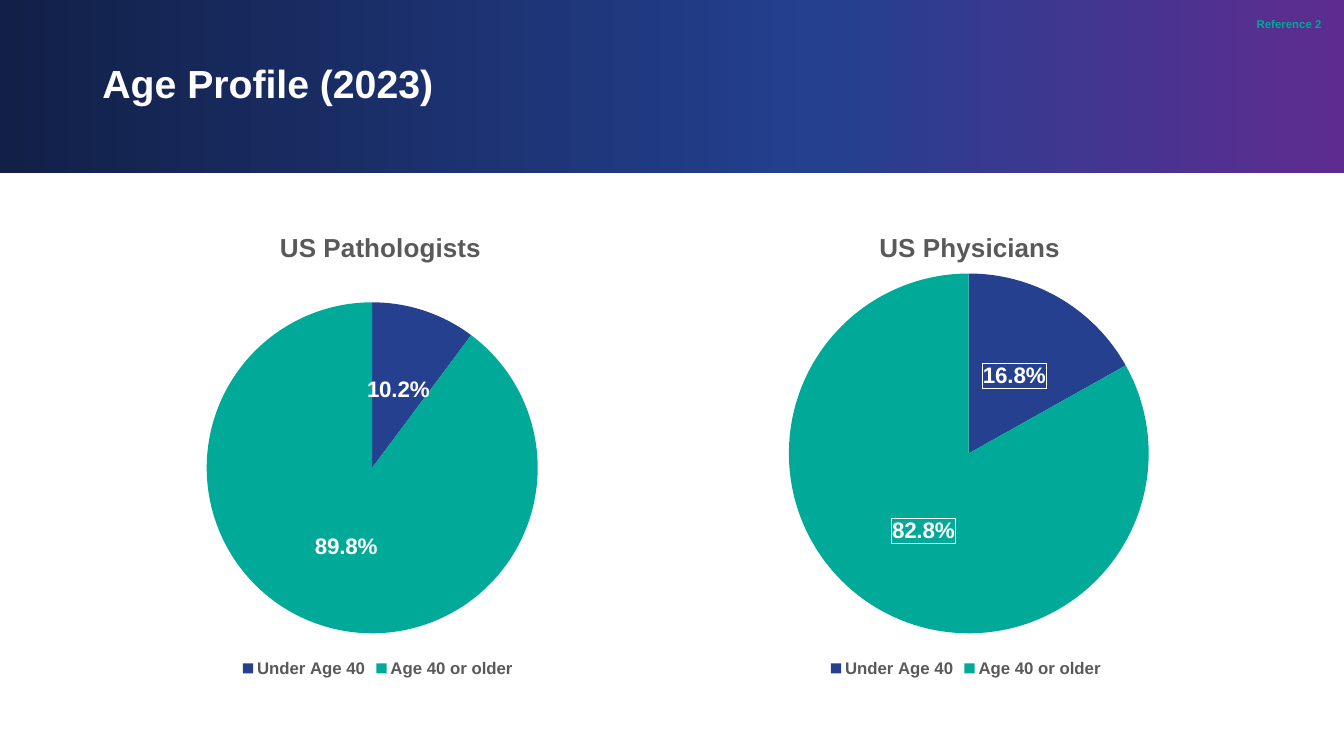
import copy

import pptx
import pptx.chart.data
import pptx.dml.color
import pptx.enum.chart
import pptx.enum.shapes
import pptx.enum.text
import pptx.oxml
import pptx.oxml.ns
import pptx.util

Pt = pptx.util.Pt
qn = pptx.oxml.ns.qn
RGB = pptx.dml.color.RGBColor.from_string
ALIGN = pptx.enum.text.PP_ALIGN
COLORS = {"navy": "122048", "blue": "24408F", "purple": "5E2C91",
          "teal": "00A998", "gray": "595959", "white": "FFFFFF", "black": "000000"}


def set_text(frame, text, size, color, align=ALIGN.LEFT, line_spacing=None):
    para = frame.paragraphs[0]
    para.alignment = align
    para.line_spacing = line_spacing
    span = para.add_run()
    span.text = text
    span.font.name, span.font.size, span.font.bold = "Arial", Pt(size), True
    span.font.color.rgb = RGB(COLORS[color])


def set_layout(parent, index, **fractions):
    """Place a chart part by fractions of the chart's width and height."""
    for old in parent.findall(qn("c:layout")):
        parent.remove(old)
    target = '<c:layoutTarget val="inner"/>' if "w" in fractions else ""
    modes = "".join(f'<c:{key}Mode val="edge"/>' for key in "xy")
    sizes = "".join(f'<c:{key} val="{value}"/>' for key, value in fractions.items())
    parent.insert(index, pptx.oxml.parse_xml(
        f'<c:layout {pptx.oxml.ns.nsdecls("c")}><c:manualLayout>'
        f'{target}{modes}{sizes}</c:manualLayout></c:layout>'))


deck = pptx.Presentation()
deck.slide_width, deck.slide_height = Pt(960), Pt(540)
page = deck.slides.add_slide(deck.slide_layouts[5])

# Gradient banner, behind the title
banner = page.shapes.add_shape(pptx.enum.shapes.MSO_SHAPE.RECTANGLE, 0, 0, Pt(960), Pt(123.8))
banner.shadow.inherit = False
banner.line.fill.background()
banner.fill.gradient()
banner.fill.gradient_angle = 0
first_stop = banner.element.find(".//" + qn("a:gs"))
first_stop.addnext(copy.deepcopy(first_stop))
for stop, color, position in zip(banner.fill.gradient_stops, ("navy", "blue", "purple"), (0, 0.61, 1)):
    stop.color.rgb = RGB(COLORS[color])
    stop.position = position
banner.element.getparent().insert(2, banner.element)

# Title
title = page.shapes.title
title.left, title.top, title.width, title.height = Pt(66), Pt(8), Pt(828), Pt(107)
title.text_frame.vertical_anchor = pptx.enum.text.MSO_ANCHOR.MIDDLE
set_text(title.text_frame, "Age Profile (2023)", 28, "white", line_spacing=0.9)

# Pie charts: heading, left, values, plot area, label border
pies = [
    ("US Pathologists", 66, (0.102, 0.898), dict(x=0.2, y=0.21, w=0.58, h=0.69), 0.32, False),
    ("US Physicians", 486, (0.168, 0.828), dict(x=0.19, y=0.15, w=0.63, h=0.75), 0.34, True),
]
for heading, left, values, plot_area, heading_x, bordered in pies:
    data = pptx.chart.data.CategoryChartData(number_format="0.0%")
    data.categories = ["Under Age 40", "Age 40 or older"]
    data.add_series(heading, values)
    chart = page.shapes.add_chart(pptx.enum.chart.XL_CHART_TYPE.PIE, Pt(left), Pt(144),
                                  Pt(408), Pt(342.7), data).chart
    chart.font.name, chart.font.size = "Arial", Pt(10)
    chart.font.color.rgb = RGB(COLORS["black"])

    chart.has_title = True
    set_text(chart.chart_title.text_frame, heading, 18.6, "gray", ALIGN.CENTER)
    set_layout(chart.element.find(".//" + qn("c:title")), 1, x=heading_x, y=0.05)
    set_layout(chart.element.find(".//" + qn("c:plotArea")), 0, **plot_area)

    chart.has_legend = True
    chart.legend.position = pptx.enum.chart.XL_LEGEND_POSITION.BOTTOM
    chart.legend.include_in_layout = False
    legend_font = chart.legend.font
    legend_font.name, legend_font.size, legend_font.bold = "Arial", Pt(12), True
    legend_font.color.rgb = RGB(COLORS["gray"])

    chart.plots[0].vary_by_categories = True
    series = chart.plots[0].series[0]
    for index, color in enumerate(("blue", "teal")):
        wedge = series.points[index].format
        wedge.fill.solid()
        wedge.fill.fore_color.rgb = RGB(COLORS[color])
        wedge.line.fill.background()

    labels = series.data_labels
    labels.show_value = True
    labels.show_percentage = False
    labels.number_format, labels.number_format_is_linked = "0.0%", False
    labels.position = pptx.enum.chart.XL_LABEL_POSITION.CENTER
    labels.font.name, labels.font.size, labels.font.bold = "Arial", Pt(16), True
    labels.font.color.rgb = RGB(COLORS["white"])
    if bordered:
        label_text = chart.element.find(".//" + qn("c:dLbls") + "/" + qn("c:txPr"))
        label_text.addprevious(pptx.oxml.parse_xml(
            f'<c:spPr {pptx.oxml.ns.nsdecls("c", "a")}><a:noFill/><a:ln w="9525"><a:solidFill>'
            f'<a:srgbClr val="{COLORS["white"]}"/></a:solidFill></a:ln></c:spPr>'))

# Superscript reference in the corner
reference = page.shapes.add_textbox(Pt(807), Pt(8.6), Pt(144), Pt(20))
reference.text_frame.word_wrap = True
set_text(reference.text_frame, "Reference 2", 14, "teal", ALIGN.RIGHT, line_spacing=0.9)
reference.element.find(".//" + qn("a:rPr")).set("baseline", "30000")

deck.save("out.pptx")
